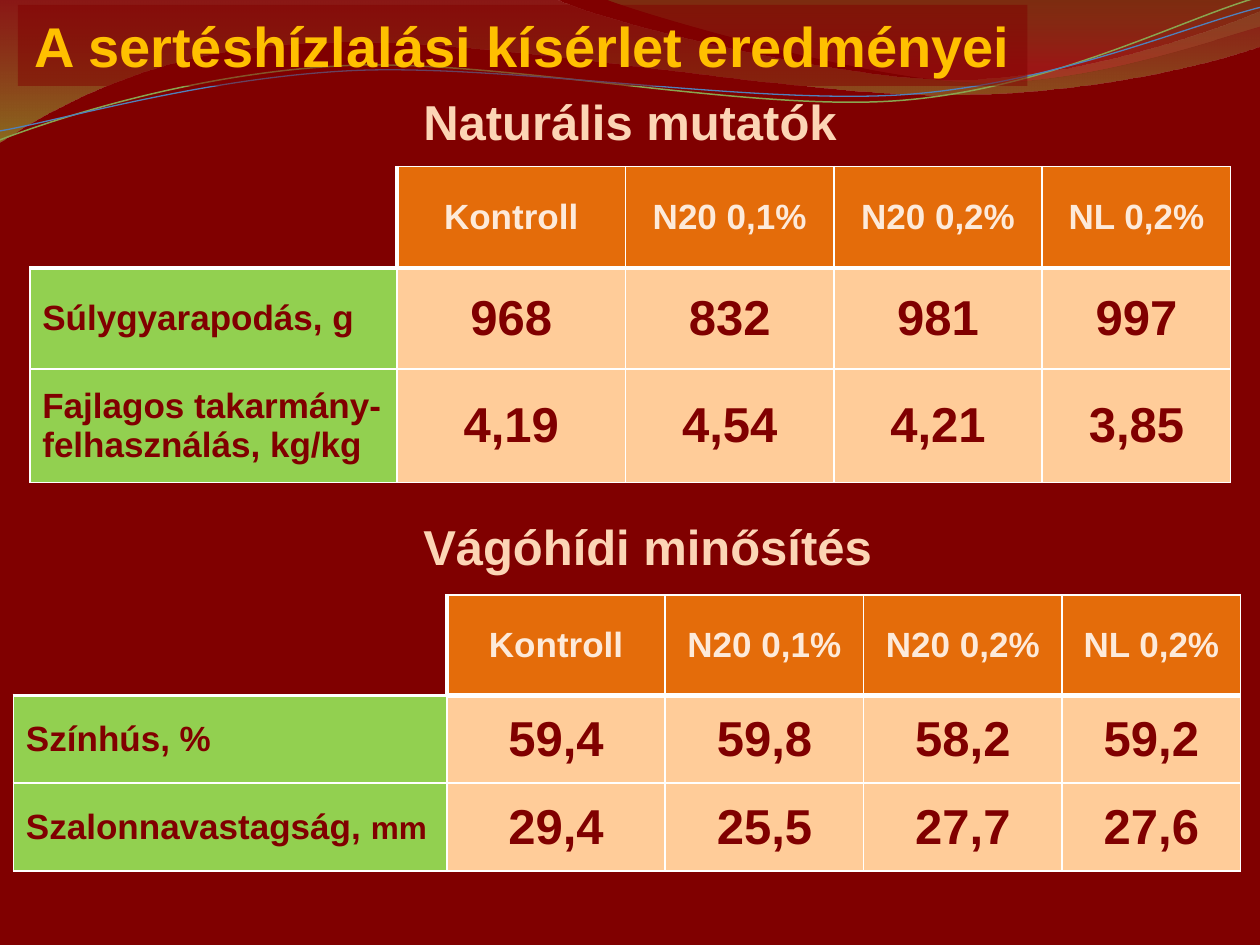
from lxml import etree
from pptx import Presentation
from pptx.dml.color import RGBColor
from pptx.enum.text import MSO_ANCHOR, MSO_AUTO_SIZE, PP_ALIGN
from pptx.oxml.ns import qn
from pptx.util import Cm, Pt

CENTER, LEFT = PP_ALIGN.CENTER, PP_ALIGN.LEFT
MIDDLE = MSO_ANCHOR.MIDDLE
NO_AUTOFIT = MSO_AUTO_SIZE.NONE
TITLE_ONLY = 5


def rgb(value):
    return RGBColor.from_string(value)


def set_opacity(shape, percents):
    """Give the fill colours of a shape their opacity, in order."""
    colors = shape.element.spPr.iter(qn("a:srgbClr"))
    for color, percent in zip(colors, percents):
        etree.SubElement(color, qn("a:alpha")).set("val", str(percent * 1000))


class SlideBuilder:
    font = "Arial"
    dark, gold, peach = "800000", "FFC000", "FCD5B5"
    header_fill, header_text = "E46C0A", "FDEADA"
    label_fill, value_fill, border = "92D050", "FFCC99", "FFFFFF"

    def __init__(self, slide):
        self.slide = slide
        slide.background.fill.solid()
        slide.background.fill.fore_color.rgb = rgb(self.dark)

    def style(self, paragraph, size, color, align=CENTER):
        paragraph.alignment = align
        font = paragraph.font
        font.name, font.size, font.bold = self.font, Pt(size), True
        font.color.rgb = rgb(color)

    def outline(self, steps, close):
        """Draw through points and (control, control, end) curves."""
        ends = [(Cm(step[-2]), Cm(step[-1])) for step in steps]
        builder = self.slide.shapes.build_freeform(*ends[0], scale=1.0)
        builder.add_line_segments(ends[1:], close=close)
        shape = builder.convert_to_shape()
        shape.shadow.inherit = False
        # Bend the segments that have control points
        segments = list(shape.element.spPr.iter(qn("a:lnTo")))
        for segment, step in zip(segments, steps[1:]):
            if len(step) == 2:
                continue
            curve = etree.Element(qn("a:cubicBezTo"))
            for x, y in zip(step[::2], step[1::2]):
                point = etree.SubElement(curve, qn("a:pt"))
                point.set("x", str(Cm(x) - shape.left))
                point.set("y", str(Cm(y) - shape.top))
            segment.getparent().replace(segment, curve)
        return shape

    def band(self, steps, stops):
        """A filled wave; stops are (position, colour, opacity)."""
        shape = self.outline(steps, True)
        shape.line.fill.background()
        shape.fill.gradient()
        shape.fill.gradient_angle = 270
        for stop, (position, color, _) in zip(shape.fill.gradient_stops, stops):
            stop.position = position
            stop.color.rgb = rgb(color)
        set_opacity(shape, [opacity for _, _, opacity in stops])

    def wave_line(self, steps, color, width):
        shape = self.outline(steps, False)
        shape.fill.background()
        shape.line.color.rgb = rgb(color)
        shape.line.width = Pt(width)

    def title(self, text, left, top, width, height):
        title = self.slide.shapes.title
        title.left, title.top = Cm(left), Cm(top)
        title.width, title.height = Cm(width), Cm(height)
        title.fill.solid()
        title.fill.fore_color.rgb = rgb(self.dark)
        set_opacity(title, [49])
        frame = title.text_frame
        frame.text = text
        frame.auto_size, frame.vertical_anchor = NO_AUTOFIT, MIDDLE
        self.style(frame.paragraphs[0], 32, self.gold)
        # Bring the title in front of the waves
        self.slide.shapes.element.append(title.element)

    def heading(self, text, left, top, width, wrap=True):
        box = self.slide.shapes.add_textbox(Cm(left), Cm(top), Cm(width), Cm(1.45))
        box.text_frame.word_wrap = wrap
        box.text_frame.text = text
        self.style(box.text_frame.paragraphs[0], 28, self.peach)

    def borders(self, cell, widths):
        """Set left, right, top and bottom border; None leaves a side open."""
        properties = cell._tc.get_or_add_tcPr()
        for i, (side, width) in enumerate(zip("LRTB", widths)):
            line = etree.Element(qn(f"a:ln{side}"))
            if width is None:
                etree.SubElement(line, qn("a:noFill"))
            else:
                line.set("w", str(Pt(width)))
                fill = etree.SubElement(line, qn("a:solidFill"))
                etree.SubElement(fill, qn("a:srgbClr")).set("val", self.border)
            properties.insert(i, line)

    def cell(self, cell, text, row, col):
        if row == 0 and col == 0:
            cell.fill.background()
            self.borders(cell, (None, 2.25, None, 2.25))
            return
        if row == 0:
            fill, size, color = self.header_fill, 20, self.header_text
        elif col == 0:
            fill, size, color = self.label_fill, 20, self.dark
        else:
            fill, size, color = self.value_fill, 28, self.dark
        cell.fill.solid()
        cell.fill.fore_color.rgb = rgb(fill)
        cell.vertical_anchor = MIDDLE
        paragraph = cell.text_frame.paragraphs[0]
        main, *small = text if isinstance(text, tuple) else (text,)
        paragraph.add_run().text = main
        for part in small:
            run = paragraph.add_run()
            run.text, run.font.size = part, Pt(18)
        self.style(paragraph, size, color, CENTER if col else LEFT)
        header_rule = 3 if col else 2.25
        self.borders(cell, (2.25 if (row, col) == (0, 1) else 1,
                            1,
                            header_rule if row == 1 else 1,
                            header_rule if row == 0 else 1))

    def table(self, rows, left, top, widths, heights):
        table = self.slide.shapes.add_table(
            len(rows), len(widths), Cm(left), Cm(top),
            Cm(sum(widths)), Cm(sum(heights))).table
        table.first_row = table.horz_banding = False
        for column, width in zip(table.columns, widths):
            column.width = Cm(width)
        for r, (values, height) in enumerate(zip(rows, heights)):
            table.rows[r].height = Cm(height)
            for c, value in enumerate(values):
                self.cell(table.cell(r, c), value, r, c)


def main():
    deck = Presentation()
    deck.slide_width, deck.slide_height = Cm(25.4), Cm(19.05)
    page = SlideBuilder(deck.slides.add_slide(deck.slide_layouts[TITLE_ONLY]))

    # Waves along the top edge
    page.band([(0, -0.03), (11.18, -0.03),
               (12.09, 0.43, 16.87, 1.6, 19.25, 1.6),
               (21.67, 1.6, 24.33, 0.66, 25.4, 0.23), (25.43, 0.91),
               (24.97, 1.12, 22.1, 1.93, 18.95, 1.91),
               (15.8, 1.91, 9.7, 0.71, 6.53, 0.86),
               (3.28, 0.89, 1.17, 2.11, -0.03, 2.87)],
              [(0, "973330", 45), (1, "95C238", 55)])
    page.band([(12.17, -0.03),
               (12.93, 0.28, 17.32, 1.57, 19.53, 1.65),
               (21.74, 1.75, 24.41, 0.81, 25.4, 0.53), (25.4, 0)],
              [(0, "769537", 30), (0.8, "BE3330", 45)])
    page.wave_line([(0, 2.82),
                    (1.22, 2.36, 4.01, 1.45, 7.04, 1.32),
                    (10.03, 1.19, 15.06, 2.26, 18.11, 2.03),
                    (21.16, 1.8, 23.83, 0.38, 25.35, -0.05)], "89A54F", 0.85)
    page.wave_line([(0, 2.64),
                    (1.19, 2.44, 4.17, 1.55, 7.19, 1.42),
                    (10.24, 1.3, 15.16, 2.11, 18.21, 1.91),
                    (21.23, 1.7, 23.9, 0.53, 25.4, 0.15)], "4F81BD", 0.75)

    page.title("A sertéshízlalási kísérlet eredményei", 0.36, 0.1, 20.35, 1.63)
    groups = ("", "Kontroll", "N20 0,1%", "N20 0,2%", "NL 0,2%")

    # Growth results
    page.table([groups,
                ("Súlygyarapodás, g", "968", "832", "981", "997"),
                ("Fajlagos takarmány-felhasználás, kg/kg",
                 "4,19", "4,54", "4,21", "3,85")],
               0.6, 3.36, (7.4, 4.61, 4.2, 4.2, 3.8), (2.04, 2.04, 2.29))
    page.heading("Naturális mutatók", 0, 1.73, 25.4)

    # Slaughterhouse results
    page.heading("Vágóhídi minősítés", 8.23, 10.29, 9.65, wrap=False)
    page.table([groups,
                ("Színhús, %", "59,4", "59,8", "58,2", "59,2"),
                (("Szalonnavastagság, ", "mm"), "29,4", "25,5", "27,7", "27,6")],
               0.27, 11.99, (8.74, 4.4, 4, 4, 3.6), (2.03, 1.77, 1.77))

    deck.save("out.pptx")


if __name__ == "__main__":
    main()
